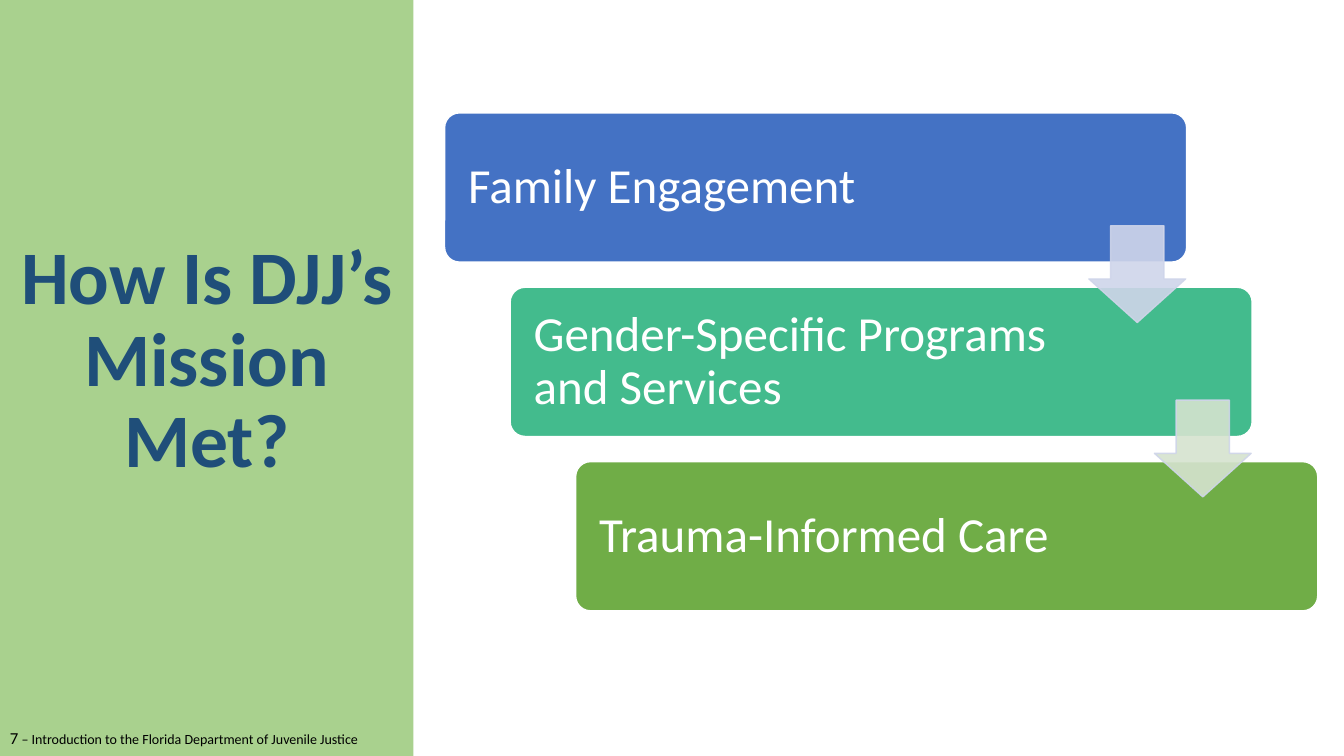
from pptx import Presentation
from pptx.dml.color import RGBColor
from pptx.enum.shapes import MSO_SHAPE
from pptx.enum.text import MSO_ANCHOR, PP_ALIGN
from pptx.oxml.ns import qn
from pptx.util import Inches, Pt
from lxml import etree

RECT, ROUND, ARROW = MSO_SHAPE.RECTANGLE, MSO_SHAPE.ROUNDED_RECTANGLE, MSO_SHAPE.DOWN_ARROW
TOP, MID = MSO_ANCHOR.TOP, MSO_ANCHOR.MIDDLE
LEFT, MIDDLE = PP_ALIGN.LEFT, PP_ALIGN.CENTER

WHITE = RGBColor(0xFF, 0xFF, 0xFF)
BLACK = RGBColor(0, 0, 0)
NAVY = RGBColor(0x1F, 0x4E, 0x79)
LEAF = RGBColor(0xA9, 0xD1, 0x8E)
BLUE = RGBColor(0x44, 0x72, 0xC4)
TEAL = RGBColor(0x43, 0xBB, 0x8D)
GREEN = RGBColor(0x70, 0xAD, 0x47)
MIST = RGBColor(0xCF, 0xD5, 0xEA)
SAGE = RGBColor(0xD5, 0xE3, 0xCF)

TITLE = "How Is DJJ’s Mission Met?"
STEPS = [
    ("Family Engagement", BLUE),
    ("Gender-Specific Programs and Services", TEAL),
    ("Trauma-Informed Care", GREEN),
]
ARROWS = [MIST, SAGE]
FOOT = [("7", 12), (" – Introduction to the Florida Department of Juvenile Justice", 10)]

WIDE, HIGH = 13.33, 7.5
SIDE = 4.1
BAR = (4.41, 1.12, 7.36, 1.48)
HEAD = (10.8, 2.24, 0.96, 0.96)
SHIFT, DROP = 0.65, 1.73
INSET = 0.19
ROOM = 1.81


def place(box, row=0):
    x, y, w, h = box
    return [Inches(v) for v in (x + row * SHIFT, y + row * DROP, w, h)]


def style(item, values):
    for name, value in values.items():
        setattr(item, name, value)


def write(shape, runs, color, frame, para, bold=False):
    text = shape.text_frame
    style(text, {"word_wrap": True, **frame})
    line = text.paragraphs[0]
    style(line, para)
    for words, size in runs:
        run = line.add_run()
        run.text = words
        style(run.font, {"name": "Calibri", "size": Pt(size), "bold": bold})
        run.font.color.rgb = color


def draw(kind, box, fill, edge=None, row=0):
    shape = slide.shapes.add_shape(kind, *place(box, row))
    shape.shadow.inherit = False
    shape.fill.solid()
    shape.fill.fore_color.rgb = fill
    if edge is None:
        shape.line.fill.background()
    else:
        shape.line.color.rgb = edge
        shape.line.width = Pt(1)
    return shape


deck = Presentation()
deck.slide_width, deck.slide_height = Inches(WIDE), Inches(HIGH)
slide = deck.slides.add_slide(deck.slide_layouts[5])

panel = draw(RECT, (0, 0, SIDE, HIGH), LEAF)
slide.shapes._spTree.insert(2, panel._element)

title = slide.shapes.title
style(title, dict(zip(("left", "top", "width", "height"), place((0, 1.31, SIDE, 4.56)))))
write(title, [(TITLE, 54)], NAVY, {"vertical_anchor": MID},
      {"alignment": MIDDLE, "line_spacing": 0.9}, True)

for row, (words, fill) in enumerate(STEPS):
    bar = draw(ROUND, BAR, fill, WHITE, row)
    bar.adjustments[0] = 0.1
    write(bar, [(words, 35)], WHITE,
          {"vertical_anchor": MID, "margin_left": Inches(INSET), "margin_right": Inches(ROOM)},
          {"alignment": LEFT, "line_spacing": 0.9})

for row, fill in enumerate(ARROWS):
    arrow = draw(ARROW, HEAD, fill, MIST, row)
    arrow.adjustments[0] = 0.45
    arrow.adjustments[1] = 0.45
    arrow.adjustments[0] = 0.55
    for tint in arrow._element.spPr.iter(qn("a:srgbClr")):
        etree.SubElement(tint, qn("a:alpha")).set("val", "90000")

foot = slide.shapes.add_textbox(*place((0, 7.17, SIDE, 0.33)))
write(foot, FOOT, BLACK, {"vertical_anchor": TOP}, {"alignment": LEFT})

deck.save("out.pptx")
